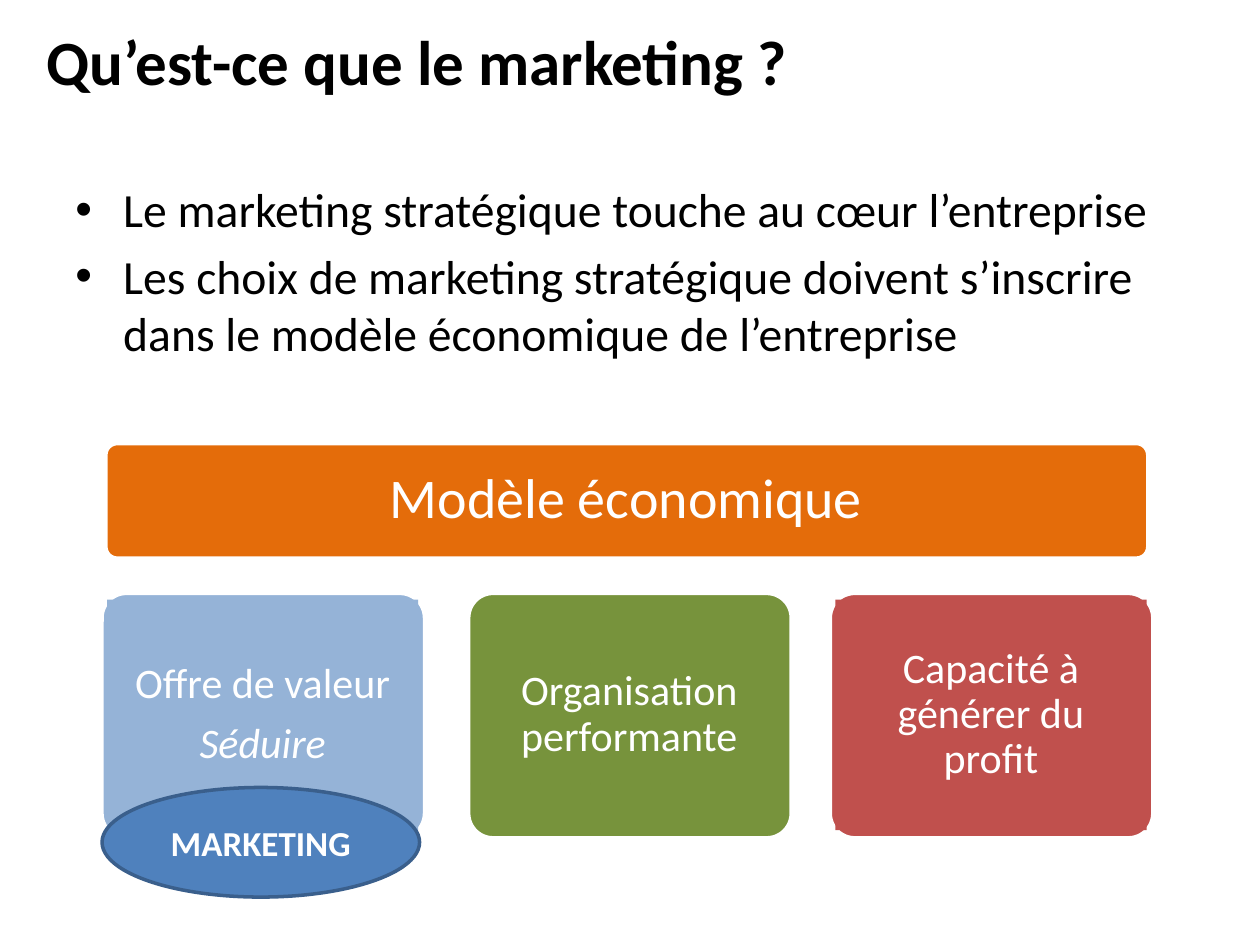
"""Build a slide that explains marketing within the business model."""
from lxml.etree import SubElement
from pptx import Presentation
from pptx.dml.color import RGBColor
from pptx.enum.shapes import MSO_SHAPE
from pptx.enum.text import MSO_ANCHOR, PP_ALIGN
from pptx.oxml.ns import qn
from pptx.util import Inches, Pt

COLORS = {
    "black": "000000", "white": "FFFFFF", "light": "95B3D7", "orange": "E46C0A",
    "green": "77933C", "red": "C0504D", "blue": "4F81BD", "navy": "3A5F8C",
}


def color(name):
    return RGBColor.from_string(COLORS[name])


def write(frame, *lines, size, ink="white", bold=False, slant=(), align=PP_ALIGN.CENTER,
          anchor=MSO_ANCHOR.MIDDLE, inset=None, space=None, before=0, after=0, bullet=False):
    frame.word_wrap = True
    frame.vertical_anchor = anchor
    if inset is not None:
        frame.margin_left = frame.margin_right = Inches(inset)
        frame.margin_top = frame.margin_bottom = Inches(inset)
    for index, line in enumerate(lines):
        para = frame.paragraphs[0] if index == 0 else frame.add_paragraph()
        para.text = line
        para.alignment = align
        para.line_spacing = space
        para.space_before = Pt(before if index else 0)
        para.space_after = Pt(after)
        if bullet:
            props = para._p.get_or_add_pPr()
            props.set("marL", str(Inches(0.38)))
            props.set("indent", str(Inches(-0.38)))
            SubElement(props, qn("a:buFont"), typeface="Arial")
            SubElement(props, qn("a:buChar"), char="•")
        font = para.font
        font.name = "Calibri"
        font.size = Pt(size)
        font.bold = bold
        font.italic = index in slant
        font.color.rgb = color(ink)


class Page:
    """Hold the style and the current slide."""

    def __init__(self, deck):
        self.slide = deck.slides.add_slide(deck.slide_layouts[5])

    def title(self, text, box):
        shape = self.slide.shapes.title
        shape.left, shape.top, shape.width, shape.height = map(Inches, box)
        write(shape.text_frame, text, size=36, ink="black", bold=True,
              align=PP_ALIGN.LEFT, anchor=MSO_ANCHOR.TOP)

    def list(self, lines, box):
        shape = self.slide.shapes.add_textbox(*map(Inches, box))
        write(shape.text_frame, *lines, size=27.2, ink="black", align=PP_ALIGN.LEFT,
              anchor=MSO_ANCHOR.TOP, before=5.4, bullet=True)

    def shape(self, kind, box, fill, line=None):
        shape = self.slide.shapes.add_shape(kind, *map(Inches, box))
        shape.shadow.inherit = False
        shape.fill.solid()
        shape.fill.fore_color.rgb = color(fill)
        if line:
            shape.line.color.rgb = color(line)
            shape.line.width = Pt(2)
        else:
            shape.line.fill.background()
        return shape

    def card(self, lines, box, inner, fill, size=24, slant=(), plain=False):
        outer = self.shape(MSO_SHAPE.ROUNDED_RECTANGLE, box, fill, "white")
        outer.adjustments[0] = 0.1
        if plain:
            label = self.slide.shapes.add_textbox(*map(Inches, inner))
        else:
            label = self.shape(MSO_SHAPE.RECTANGLE, inner, fill)
        write(label.text_frame, *lines, size=size, slant=slant, inset=0.09,
              space=0.9, after=size * 0.35)

    def oval(self, text, box, fill, line):
        shape = self.shape(MSO_SHAPE.OVAL, box, fill, line)
        write(shape.text_frame, text, size=20, bold=True)


def main():
    deck = Presentation()
    deck.slide_width, deck.slide_height = Inches(10), Inches(7.5)
    page = Page(deck)
    page.title("Qu’est-ce que le marketing ?", (0.27, 0.13, 7.17, 1.25))
    page.list([
        "Le marketing stratégique touche au cœur l’entreprise",
        "Les choix de marketing stratégique doivent s’inscrire "
        "dans le modèle économique de l’entreprise",
    ], (0.5, 1.38, 9, 1.6))
    page.card(["Modèle économique"], (0.84, 3.52, 8.27, 0.91),
              (0.98, 3.54, 7.98, 0.86), "orange", size=32)
    pillars = [
        (0.81, ["Offre de valeur", "Séduire"], "light", (1,), False),
        (3.72, ["Organisation performante"], "green", (), True),
        (6.59, ["Capacité à générer du profit"], "red", (), False),
    ]
    for left, lines, fill, slant, plain in pillars:
        page.card(lines, (left, 4.71, 2.56, 1.94), (left + 0.04, 4.76, 2.47, 1.83),
                  fill, slant=slant, plain=plain)
    page.oval("MARKETING", (0.81, 6.25, 2.52, 0.87), "blue", "navy")
    deck.save("out.pptx")


if __name__ == "__main__":
    main()
